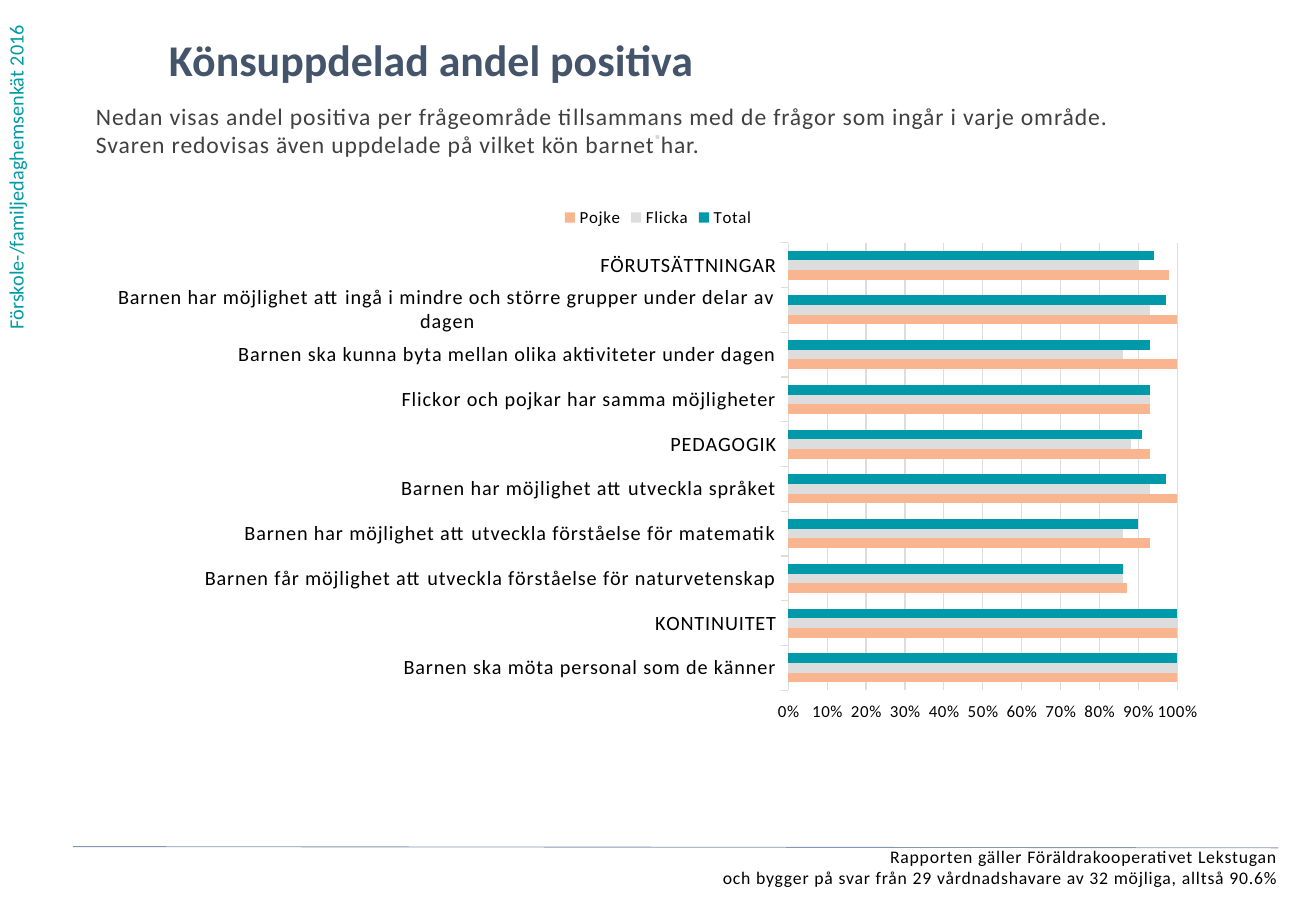
from lxml import etree
from pptx import Presentation
from pptx.chart.data import CategoryChartData
from pptx.dml.color import RGBColor
from pptx.enum.chart import XL_CHART_TYPE as Kind, XL_LEGEND_POSITION as Spot
from pptx.enum.chart import XL_TICK_LABEL_POSITION as Side, XL_TICK_MARK as Tick
from pptx.enum.text import PP_ALIGN as Align
from pptx.oxml import parse_xml
from pptx.oxml.ns import nsdecls, qn
from pptx.util import Inches, Pt

HUES = {"teal": "009BA4", "title": "44546A", "body": "404040", "black": "000000",
        "dot": "D2D9E2", "rule": "8497B0", "grid": "DDDDDD",
        "Total": "0099AA", "Flicka": "DDDDDD", "Pojke": "F9B590"}


def hue(name):
    return RGBColor.from_string(HUES[name])


def add_text(box, text, size, color, bold=False, space=0, align=Align.LEFT, inset=0):
    shape = slide.shapes.add_textbox(*[Inches(n) for n in box])
    frame = shape.text_frame
    frame.word_wrap = True
    frame.margin_left = frame.margin_right = Inches(inset)
    frame.margin_top = frame.margin_bottom = Inches(inset / 2)
    frame.text = text
    for para in frame.paragraphs:
        para.alignment = align
        for run in para.runs:
            run.font.size, run.font.name, run.font.bold = Pt(size), "Calibri", bold
            run.font.color.rgb = hue(color)
            run._r.get_or_add_rPr().set("spc", str(space))
    return frame


deck = Presentation()
deck.slide_width, deck.slide_height = Inches(10.83), Inches(7.5)
slide = deck.slides.add_slide(deck.slide_layouts[6])

# Texts
side = add_text((-0.02, 0, 0.4, 2.81), "Förskole-/familjedaghemsenkät 2016",
                12, "teal", inset=0.1)
side._txBody.bodyPr.set("vert", "vert270")
add_text((1.39, 0.27, 8.34, 0.57), "Könsuppdelad andel positiva", 26, "title", bold=True)
add_text((0.79, 0.84, 9.46, 0.6),
         "Nedan visas andel positiva per frågeområde tillsammans med de frågor som ingår "
         "i varje område.\vSvaren redovisas även uppdelade på vilket kön barnet har.",
         14, "body", space=50)
add_text((0.12, 6.96, 10.4, 0.43),
         "Rapporten gäller Föräldrakooperativet Lekstugan\v"
         "och bygger på svar från 29 vårdnadshavare av 32 möjliga, alltså 90.6%",
         10.5, "black", space=50, align=Align.RIGHT)
add_text((3.87, 1.02, 3.08, 0.39), "⋅", 12, "dot", bold=True, space=50, align=Align.CENTER)

# Chart data
rows = [
    ("FÖRUTSÄTTNINGAR", 0.94, 0.9, 0.98),
    ("Barnen har möjlighet att ingå i mindre och större grupper under delar av dagen",
     0.97, 0.93, 1),
    ("Barnen ska kunna byta mellan olika aktiviteter under dagen", 0.93, 0.86, 1),
    ("Flickor och pojkar har samma möjligheter", 0.93, 0.93, 0.93),
    ("PEDAGOGIK", 0.91, 0.88, 0.93),
    ("Barnen har möjlighet att utveckla språket", 0.97, 0.93, 1),
    ("Barnen har möjlighet att utveckla förståelse för matematik", 0.9, 0.86, 0.93),
    ("Barnen får möjlighet att utveckla förståelse för naturvetenskap", 0.86, 0.86, 0.87),
    ("KONTINUITET", 1, 1, 1),
    ("Barnen ska möta personal som de känner", 1, 1, 1),
]
labels, *values = zip(*rows)
data = CategoryChartData(number_format="0%")
data.categories = labels
for name, vals in zip(("Total", "Flicka", "Pojke"), values):
    data.add_series(name, vals)

# Chart
chart = slide.shapes.add_chart(Kind.BAR_CLUSTERED, Inches(0.79), Inches(1.6),
                               Inches(9.25), Inches(4.43), data).chart
chart.has_title = False
chart.has_legend = True
chart.legend.position = Spot.TOP
chart.legend.include_in_layout = False
plot = chart.plots[0]
plot.gap_width, plot.overlap, plot.vary_by_categories = 162, 0, False
for series in plot.series:
    series.format.fill.solid()
    series.format.fill.fore_color.rgb = hue(series.name)

# Axes: the categories run downwards, so the high end is at the bottom
cat, val = chart.category_axis, chart.value_axis
cat.reverse_order = True
val.tick_label_position = Side.HIGH
cat.format.line.color.rgb = hue("grid")
cat.format.line.width = Pt(0.75)
val.minimum_scale, val.maximum_scale, val.major_unit = 0, 1, 0.1
val.format.line.fill.background()
val.has_major_gridlines = True
grid = val.major_gridlines.format.line
grid.color.rgb, grid.width = hue("grid"), Pt(0.75)
val.tick_labels.number_format = "0%;0%"
val.tick_labels.number_format_is_linked = False
for axis in (cat, val):
    axis.major_tick_mark, axis.minor_tick_mark = Tick.OUTSIDE, Tick.NONE

fonts = ((chart.font, 10), (chart.legend.font, 10),
         (cat.tick_labels.font, 12), (val.tick_labels.font, 10))
for font, size in fonts:
    font.size, font.name, font.color.rgb = Pt(size), "Calibri", hue("black")
for props in chart._chartSpace.iter(qn("a:defRPr")):
    props.set("spc", "50")

# Plot area placement, as shares of the chart
area = chart._chartSpace.chart.plotArea
for old in area.findall(qn("c:layout")):
    area.remove(old)
layout = parse_xml(f"<c:layout {nsdecls('c')}><c:manualLayout/></c:layout>")
for tag, setting in (("layoutTarget", "inner"), ("xMode", "edge"), ("yMode", "edge"),
                     ("x", "0.616"), ("y", "0.09"), ("w", "0.346"), ("h", "0.832")):
    etree.SubElement(layout[0], qn(f"c:{tag}")).set("val", setting)
area.insert(0, layout)

# Footer rule
rule = slide.shapes.add_connector(1, Inches(0.6), Inches(6.97), Inches(10.52), Inches(6.98))
rule.line.color.rgb, rule.line.width = hue("rule"), Pt(0.5)
etree.SubElement(rule._element.spPr, qn("a:effectLst"))

deck.save("out.pptx")
